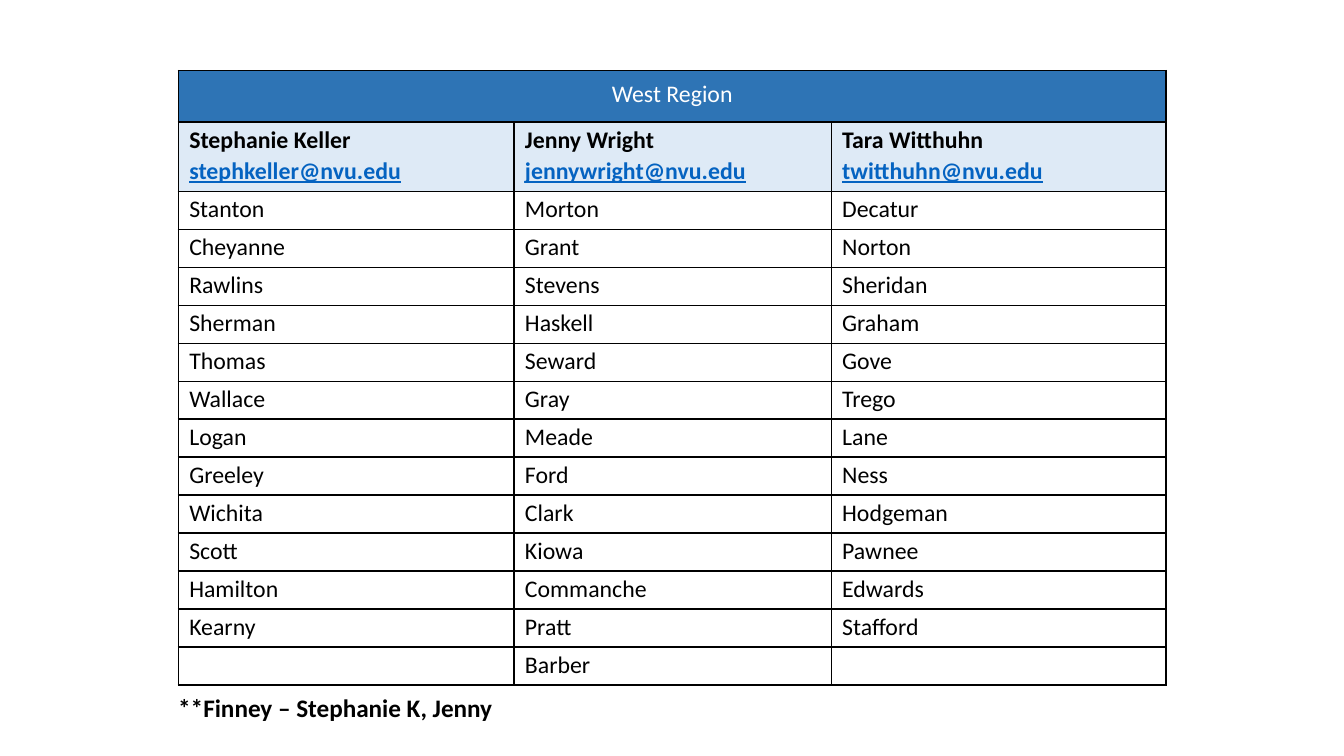
"""Build the West Region county assignment slide."""
from dataclasses import dataclass

from lxml.etree import SubElement
from pptx import Presentation
from pptx.dml.color import RGBColor as Rgb
from pptx.enum.text import MSO_AUTO_SIZE as AutoSize, PP_ALIGN as Align
from pptx.oxml.ns import qn
from pptx.slide import Slide
from pptx.table import Table, _Cell as Cell
from pptx.text.text import _Paragraph as Paragraph
from pptx.util import Pt

COLORS = {
    "black": "000000",
    "white": "FFFFFF",
    "title": "2E74B5",
    "contact": "DEEAF6",
    "email": "0563C1",
}
TITLE_HEIGHT, CONTACT_HEIGHT, COUNTY_HEIGHT = 36.8, 49.4, 27.14


@dataclass(frozen=True)
class Agent:
    name: str
    email: str
    width: float
    counties: tuple[str, ...]


AGENTS = (
    Agent("Stephanie Keller", "stephkeller@nvu.edu", 239.8, (
        "Stanton", "Cheyanne", "Rawlins", "Sherman", "Thomas", "Wallace",
        "Logan", "Greeley", "Wichita", "Scott", "Hamilton", "Kearny")),
    Agent("Jenny Wright", "jennywright@nvu.edu", 226.6, (
        "Morton", "Grant", "Stevens", "Haskell", "Seward", "Gray", "Meade",
        "Ford", "Clark", "Kiowa", "Commanche", "Pratt", "Barber")),
    Agent("Tara Witthuhn", "twitthuhn@nvu.edu", 239.2, (
        "Decatur", "Norton", "Sheridan", "Graham", "Gove", "Trego", "Lane",
        "Ness", "Hodgeman", "Pawnee", "Edwards", "Stafford")),
)


def write(para: Paragraph, text: str, color: str = "black", size: float = 17,
          bold: bool = False, underline: bool = False) -> None:
    para.text = text
    para.line_spacing = 1.07
    font = para.font
    font.name, font.size = "Calibri", Pt(size)
    font.bold, font.underline = bold, underline
    font.color.rgb = Rgb.from_string(COLORS[color])


def style_cell(cell: Cell, fill: str, side: float = 7.8, top: float = 1.2,
               bottom: float = 0) -> None:
    cell.margin_left = cell.margin_right = Pt(side)
    cell.margin_top, cell.margin_bottom = Pt(top), Pt(bottom)
    properties = cell._tc.get_or_add_tcPr()
    for edge in ("lnL", "lnR", "lnT", "lnB"):
        line = SubElement(properties, qn(f"a:{edge}"), w=str(Pt(1)))
        paint = SubElement(line, qn("a:solidFill"))
        SubElement(paint, qn("a:srgbClr"), val=COLORS["black"])
    cell.fill.solid()
    cell.fill.fore_color.rgb = Rgb.from_string(COLORS[fill])


def fill_title(table: Table) -> None:
    for column in range(len(AGENTS)):
        style_cell(table.cell(0, column), "title", 10.8, 5.2, 5.2)
    title = table.cell(0, 0)
    title.merge(table.cell(0, len(AGENTS) - 1))
    para = title.text_frame.paragraphs[0]
    write(para, "West Region", "white")
    para.alignment = Align.CENTER


def fill_agent(table: Table, column: int, agent: Agent, depth: int) -> None:
    table.columns[column].width = Pt(agent.width)
    contact = table.cell(1, column)
    style_cell(contact, "contact")
    frame = contact.text_frame
    write(frame.paragraphs[0], agent.name, bold=True)
    write(frame.add_paragraph(), agent.email, "email", bold=True, underline=True)
    for index in range(depth):
        cell = table.cell(index + 2, column)
        style_cell(cell, "white")
        if index < len(agent.counties):
            write(cell.text_frame.paragraphs[0], agent.counties[index])


def add_region_table(page: Slide) -> None:
    depth = max(len(agent.counties) for agent in AGENTS)
    heights = [TITLE_HEIGHT, CONTACT_HEIGHT] + [COUNTY_HEIGHT] * depth
    width = sum(agent.width for agent in AGENTS)
    table = page.shapes.add_table(
        len(heights), len(AGENTS), Pt(127.4), Pt(50.4), Pt(width), Pt(sum(heights))
    ).table
    table.first_row = table.horz_banding = False
    for row, height in zip(table.rows, heights):
        row.height = Pt(height)
    fill_title(table)
    for column, agent in enumerate(AGENTS):
        fill_agent(table, column, agent, depth)


def add_footnote(page: Slide) -> None:
    box = page.shapes.add_textbox(Pt(120.2), Pt(489.6), Pt(480), Pt(29.5))
    frame = box.text_frame
    frame.word_wrap = True
    frame.auto_size = AutoSize.SHAPE_TO_FIT_TEXT
    para = frame.paragraphs[0]
    write(para, "**Finney – Stephanie K, Jenny", size=18, bold=True)
    para.space_after = Pt(8)


def main() -> None:
    deck = Presentation()
    deck.slide_width, deck.slide_height = Pt(960), Pt(540)
    page = deck.slides.add_slide(deck.slide_layouts[6])
    add_region_table(page)
    add_footnote(page)
    deck.save("out.pptx")


if __name__ == "__main__":
    main()
